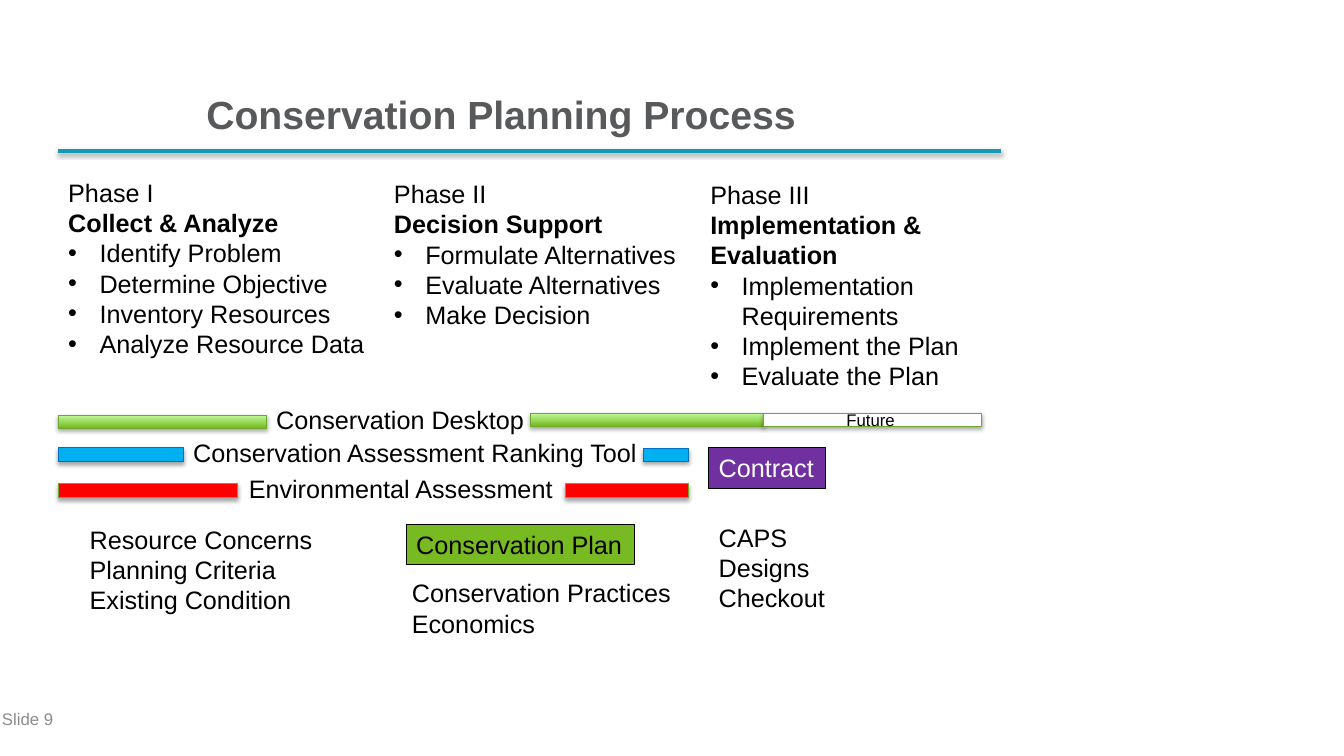
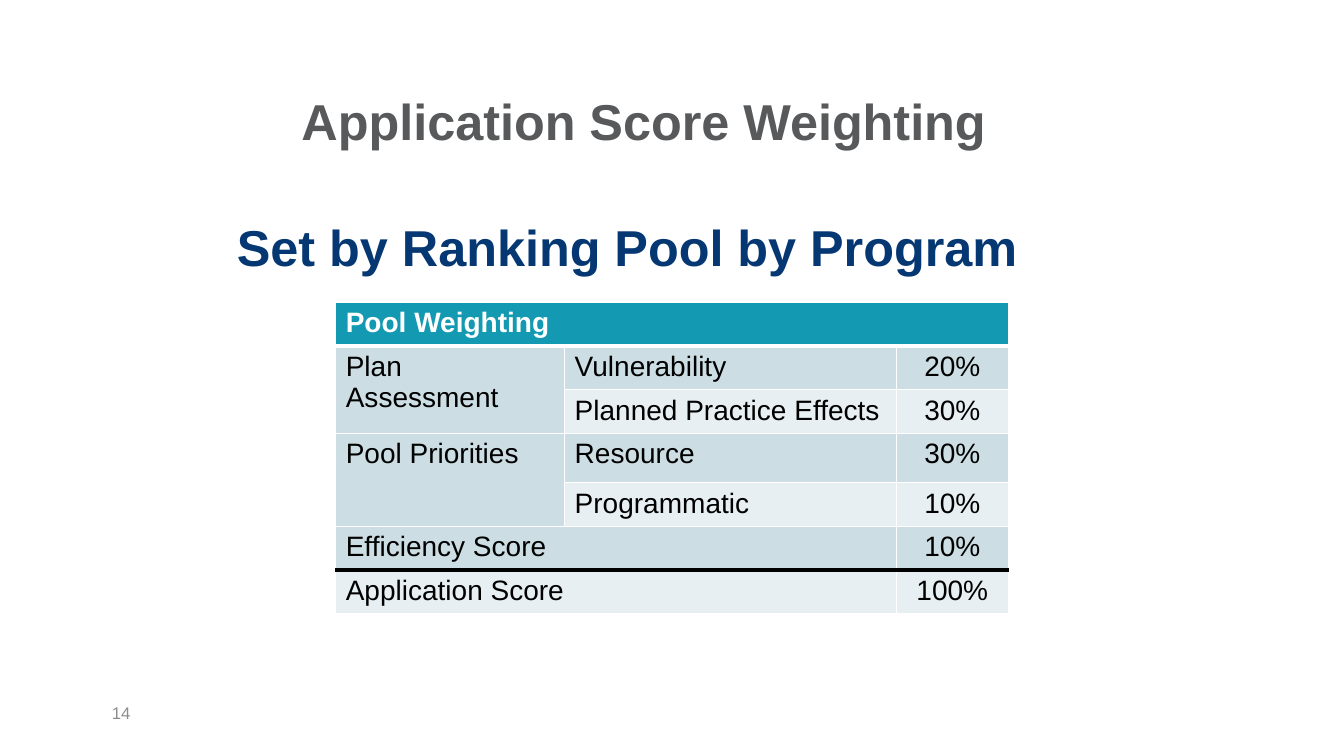
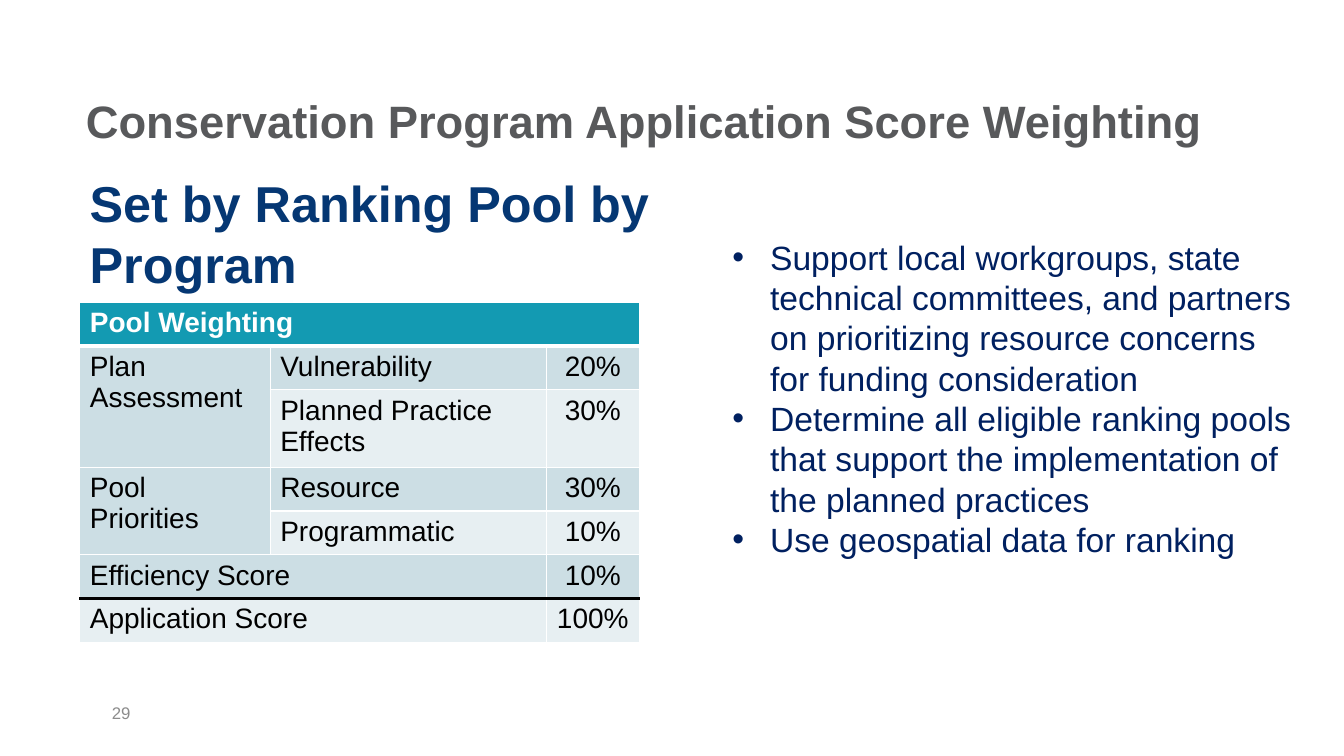
from collections.abc import Sequence
from dataclasses import dataclass

import lxml.etree
import pptx
import pptx.dml.color
import pptx.enum.dml
import pptx.enum.shapes
import pptx.enum.text
import pptx.oxml.ns
import pptx.shapes.base
import pptx.slide
import pptx.table
import pptx.text.text
import pptx.util

Cm = pptx.util.Cm
Pt = pptx.util.Pt
RGBColor = pptx.dml.color.RGBColor
Align = pptx.enum.text.PP_ALIGN
Anchor = pptx.enum.text.MSO_ANCHOR
Preset = pptx.enum.shapes.MSO_SHAPE
qn = pptx.oxml.ns.qn

FONT = "Arial"
BLACK = RGBColor(0x00, 0x00, 0x00)
WHITE = RGBColor(0xFF, 0xFF, 0xFF)
TITLE_GRAY = RGBColor(0x58, 0x59, 0x5B)
NUMBER_GRAY = RGBColor(0x8C, 0x8C, 0x8C)
TEAL = RGBColor(0x13, 0x9A, 0xB2)
HEADING_BLUE = RGBColor(0x05, 0x37, 0x73)
NAVY = RGBColor(0x00, 0x20, 0x60)
PLAN_GREEN = RGBColor(0x78, 0xBA, 0x22)
CONTRACT_PURPLE = RGBColor(0x70, 0x30, 0xA0)
BAR_GREEN = RGBColor(0x74, 0xBB, 0x1F)
BAR_LIGHT_GREEN = RGBColor(0xC1, 0xFB, 0x9D)
BAR_OUTLINE_GREEN = RGBColor(0x70, 0xA8, 0x2D)
BAR_BLUE = RGBColor(0x00, 0xB0, 0xF0)
BAR_OUTLINE_BLUE = RGBColor(0x00, 0x70, 0xC0)
BAR_RED = RGBColor(0xFF, 0x00, 0x00)
BAND_DARK = RGBColor(0xCC, 0xDE, 0xE4)
BAND_LIGHT = RGBColor(0xE7, 0xEF, 0xF2)


@dataclass(frozen=True)
class Box:
    """A rectangle on the slide, in centimetres."""
    left: float
    top: float
    width: float
    height: float

    def lengths(self) -> tuple[int, int, int, int]:
        return Cm(self.left), Cm(self.top), Cm(self.width), Cm(self.height)


@dataclass(frozen=True)
class Phase:
    name: str
    goal: str
    steps: tuple[str, ...]
    box: Box


@dataclass(frozen=True)
class TextBlock:
    lines: tuple[str, ...]
    box: Box
    size: float = 18


@dataclass(frozen=True)
class Label:
    text: str
    box: Box
    fill: RGBColor
    color: RGBColor


@dataclass(frozen=True)
class Bar:
    box: Box
    colors: tuple[RGBColor, ...]
    outline: RGBColor = BAR_OUTLINE_GREEN


@dataclass(frozen=True)
class WeightCell:
    text: str
    row: int
    column: int
    row_span: int = 1
    column_span: int = 1


PHASES = (
    Phase("Phase I", "Collect & Analyze",
          ("Identify Problem", "Determine Objective", "Inventory Resources",
           "Analyze Resource Data"), Box(1.47, 4.34, 8.1, 4.88)),
    Phase("Phase II", "Decision Support",
          ("Formulate Alternatives", "Evaluate Alternatives", "Make Decision"),
          Box(9.68, 4.37, 7.8, 4.11)),
    Phase("Phase III", "Implementation & Evaluation",
          ("Implementation Requirements", "Implement the Plan", "Evaluate the Plan"),
          Box(17.65, 4.39, 7.24, 5.64)),
)
TEXT_BLOCKS = (
    TextBlock(("Resource Concerns", "Planning Criteria", "Existing Condition"),
              Box(2.01, 13.08, 6.2, 2.57)),
    TextBlock(("CAPS", "Designs", "Checkout"), Box(17.86, 13.03, 3.3, 2.57)),
    TextBlock(("Conservation Practices", "Economics"), Box(10.13, 14.43, 7.2, 1.8)),
    TextBlock(("Conservation Desktop",), Box(6.71, 10.06, 6.9, 1.02)),
    TextBlock(("Conservation Assessment Ranking Tool",), Box(4.62, 10.9, 11.9, 1.02)),
    TextBlock(("Environmental Assessment",), Box(6.02, 11.81, 8.3, 1.02)),
    TextBlock(("Future",), Box(21.08, 10.19, 2, 0.76), size=12),
)
LABELS = (
    Label("Conservation Plan", Box(10.24, 13.21, 5.75, 1.02), PLAN_GREEN, BLACK),
    Label("Contract", Box(17.86, 11.28, 2.95, 1.02), CONTRACT_PURPLE, WHITE),
)
GREEN_GRADIENT = (BAR_GREEN, BAR_LIGHT_GREEN)
BARS = (
    Bar(Box(1.47, 10.46, 5.26, 0.33), GREEN_GRADIENT),
    Bar(Box(1.47, 11.28, 3.15, 0.36), (BAR_BLUE,), BAR_OUTLINE_BLUE),
    Bar(Box(16.21, 11.3, 1.14, 0.33), (BAR_BLUE,), BAR_OUTLINE_BLUE),
    Bar(Box(1.47, 12.19, 4.52, 0.36), (BAR_RED,)),
    Bar(Box(14.25, 12.19, 3.1, 0.36), (BAR_RED,)),
    Bar(Box(13.36, 10.41, 5.89, 0.33), GREEN_GRADIENT),
    Bar(Box(19.25, 10.41, 5.49, 0.33), (WHITE,)),
)
WEIGHT_CELLS = (
    WeightCell("Pool Weighting", 0, 0, column_span=3),
    WeightCell("Plan Assessment", 1, 0, row_span=2),
    WeightCell("Vulnerability", 1, 1),
    WeightCell("20%", 1, 2),
    WeightCell("Planned Practice Effects", 2, 1),
    WeightCell("30%", 2, 2),
    WeightCell("Pool Priorities", 3, 0, row_span=2),
    WeightCell("Resource", 3, 1),
    WeightCell("30%", 3, 2),
    WeightCell("Programmatic", 4, 1),
    WeightCell("10%", 4, 2),
    WeightCell("Efficiency Score", 5, 0, column_span=2),
    WeightCell("10%", 5, 2),
    WeightCell("Application Score", 6, 0, column_span=2),
    WeightCell("100%", 6, 2),
)
SUPPORT_POINTS = (
    "Support local workgroups, state technical committees, and partners on "
    "prioritizing resource concerns for funding consideration",
    "Determine all eligible ranking pools that support the implementation of "
    "the planned practices",
    "Use geospatial data for ranking",
)
CENTERED_TITLE = Box(0.99, 1.73, 30.48, 2.62)
NUMBER_BOX = Box(2.57, 17.45, 7.9, 1.02)


def write_text(frame: pptx.text.text.TextFrame, lines: Sequence[str], *,
               size: float = 18, color: RGBColor = BLACK, bold: Sequence[int] = (),
               align: Align = Align.LEFT, bullets_from: int | None = None,
               indent: float = 0.79) -> None:
    """Write one paragraph per line; bold lists the indexes of the bold lines."""
    for index, line in enumerate(lines):
        paragraph = frame.paragraphs[0] if index == 0 else frame.add_paragraph()
        paragraph.alignment = align
        if bullets_from is not None and index >= bullets_from:
            properties = paragraph._p.get_or_add_pPr()
            properties.set("marL", str(Cm(indent)))
            properties.set("indent", str(-Cm(indent)))
            lxml.etree.SubElement(properties, qn("a:buFont"), typeface=FONT)
            lxml.etree.SubElement(properties, qn("a:buChar"), char="•")
        run = paragraph.add_run()
        run.text = line
        run.font.name = FONT
        run.font.size = Pt(size)
        run.font.bold = index in bold
        run.font.color.rgb = color


def add_text(slide: pptx.slide.Slide, lines: Sequence[str], box: Box, *,
             anchor: Anchor = Anchor.TOP, **text_format) -> None:
    frame = slide.shapes.add_textbox(*box.lengths()).text_frame
    frame.word_wrap = True
    frame.vertical_anchor = anchor
    write_text(frame, lines, **text_format)


def add_title(slide: pptx.slide.Slide, title: str, box: Box, size: float,
              align: Align = Align.CENTER) -> None:
    add_text(slide, [title], box, anchor=Anchor.MIDDLE, size=size,
             color=TITLE_GRAY, bold=[0], align=align)


def add_slide_number(slide: pptx.slide.Slide, number: str, box: Box = NUMBER_BOX) -> None:
    add_text(slide, [number], box, anchor=Anchor.MIDDLE, size=12, color=NUMBER_GRAY)


def add_heading(slide: pptx.slide.Slide, box: Box) -> None:
    add_text(slide, ["Set by Ranking Pool by Program"], box, size=36,
             color=HEADING_BLUE, bold=[0])


def cast_shadow(shape: pptx.shapes.base.BaseShape, opacity: int, distance: float) -> None:
    """Add a soft downward shadow; call after the fill and the line are set."""
    effects = lxml.etree.SubElement(shape._element.spPr, qn("a:effectLst"))
    shadow = lxml.etree.SubElement(
        effects, qn("a:outerShdw"), blurRad=str(Pt(3.1)), dist=str(Pt(distance)),
        dir="5400000", rotWithShape="0")
    color = lxml.etree.SubElement(shadow, qn("a:srgbClr"), val=str(BLACK))
    lxml.etree.SubElement(color, qn("a:alpha"), val=str(opacity * 1000))


def add_title_rule(slide: pptx.slide.Slide) -> None:
    rule = slide.shapes.add_connector(
        pptx.enum.shapes.MSO_CONNECTOR.STRAIGHT, Cm(1.47), Cm(3.81), Cm(25.22), Cm(3.81))
    rule.line.color.rgb = TEAL
    rule.line.width = Pt(3)
    cast_shadow(rule, 38, 1.6)


def add_label(slide: pptx.slide.Slide, label: Label) -> None:
    shape = slide.shapes.add_shape(Preset.RECTANGLE, *label.box.lengths())
    shape.shadow.inherit = False
    shape.fill.solid()
    shape.fill.fore_color.rgb = label.fill
    shape.line.color.rgb = BLACK
    shape.line.width = Pt(0.75)
    shape.text_frame.word_wrap = True
    shape.text_frame.vertical_anchor = Anchor.TOP
    write_text(shape.text_frame, [label.text], color=label.color)


def add_bar(slide: pptx.slide.Slide, bar: Bar) -> None:
    shape = slide.shapes.add_shape(Preset.RECTANGLE, *bar.box.lengths())
    if len(bar.colors) > 1:
        shape.fill.gradient()
        shape.fill.gradient_angle = 90
        for stop, color in zip(shape.fill.gradient_stops, bar.colors):
            stop.color.rgb = color
    else:
        shape.fill.solid()
        shape.fill.fore_color.rgb = bar.colors[0]
    shape.line.color.rgb = bar.outline
    shape.line.width = Pt(0.75)
    cast_shadow(shape, 35, 1.8)


def set_border(cell: pptx.table._Cell, side: str, color: RGBColor, width: float) -> None:
    line = lxml.etree.SubElement(
        cell._tc.get_or_add_tcPr(), qn(f"a:ln{side}"), w=str(Pt(width)))
    fill = lxml.etree.SubElement(line, qn("a:solidFill"))
    lxml.etree.SubElement(fill, qn("a:srgbClr"), val=str(color))


def style_weight_cell(cell: pptx.table._Cell, row: int, fill: RGBColor) -> None:
    thin, header_rule, total_rule = (WHITE, 1), (WHITE, 3), (BLACK, 3)
    top = {1: header_rule, 6: total_rule}.get(row, thin)
    bottom = {0: header_rule, 5: total_rule}.get(row, thin)
    for side, border in zip("LRTB", (thin, thin, top, bottom)):
        set_border(cell, side, *border)
    cell.fill.solid()
    cell.fill.fore_color.rgb = fill


def add_weight_table(slide: pptx.slide.Slide, left: float, widths: Sequence[float],
                     heights: Sequence[float]) -> None:
    box = Box(left, 7.62, sum(widths), sum(heights))
    table = slide.shapes.add_table(len(heights), len(widths), *box.lengths()).table
    table.first_row = table.horz_banding = False
    for column, width in zip(table.columns, widths):
        column.width = Cm(width)
    for row, height in zip(table.rows, heights):
        row.height = Cm(height)
    for item in WEIGHT_CELLS:
        is_header = item.row == 0
        band = BAND_DARK if item.row % 2 else BAND_LIGHT
        fill = TEAL if is_header else band
        last_row = item.row + item.row_span
        last_column = item.column + item.column_span
        for row in range(item.row, last_row):
            for column in range(item.column, last_column):
                style_weight_cell(table.cell(row, column), row, fill)
        cell = table.cell(item.row, item.column)
        if item.row_span * item.column_span > 1:
            cell.merge(table.cell(last_row - 1, last_column - 1))
        write_text(cell.text_frame, [item.text], size=20,
                   color=WHITE if is_header else BLACK,
                   bold=[0] if is_header else [],
                   align=Align.CENTER if item.column == 2 else Align.LEFT)


def build_process_slide(slide: pptx.slide.Slide) -> None:
    add_slide_number(slide, "Slide 9", Box(-0.2, 17.6, 7.9, 1.02))
    add_title(slide, "Conservation Planning Process", Box(4.95, 1.57, 23.98, 2.62), 28,
              Align.LEFT)
    add_title_rule(slide)
    for phase in PHASES:
        add_text(slide, [phase.name, phase.goal, *phase.steps], phase.box,
                 bold=[1], bullets_from=2)
    for label in LABELS:
        add_label(slide, label)
    for bar in BARS:
        add_bar(slide, bar)
    for block in TEXT_BLOCKS:
        add_text(slide, block.lines, block.box, size=block.size)


def build_weighting_slide(slide: pptx.slide.Slide) -> None:
    add_title(slide, "Application Score Weighting", CENTERED_TITLE, 36)
    add_slide_number(slide, "14")
    add_weight_table(slide, 8.46, (5.77, 8.36, 2.82),
                     (1.04, 1.04, 1.04, 1.24, 1.04, 1.04, 1.04))
    add_heading(slide, Box(5.72, 5.33, 21.49, 2.1))


def build_program_slide(slide: pptx.slide.Slide) -> None:
    add_title(slide, "Conservation Program Application Score Weighting",
              CENTERED_TITLE, 32.4)
    add_slide_number(slide, "29")
    add_weight_table(slide, 2.01, (4.8, 6.96, 2.34),
                     (1.04, 1.04, 1.83, 1.04, 1.04, 1.04, 1.04))
    add_heading(slide, Box(2.01, 4.22, 15.39, 3.4))
    add_text(slide, SUPPORT_POINTS, Box(18.21, 5.84, 14.63, 8.8), size=24,
             color=NAVY, bullets_from=0, indent=0.95)


def main() -> None:
    presentation = pptx.Presentation()
    presentation.slide_width = Cm(33.87)
    presentation.slide_height = Cm(19.05)
    blank_layout = presentation.slide_layouts[6]
    for build in (build_process_slide, build_weighting_slide, build_program_slide):
        build(presentation.slides.add_slide(blank_layout))
    presentation.save("out.pptx")


if __name__ == "__main__":
    main()
